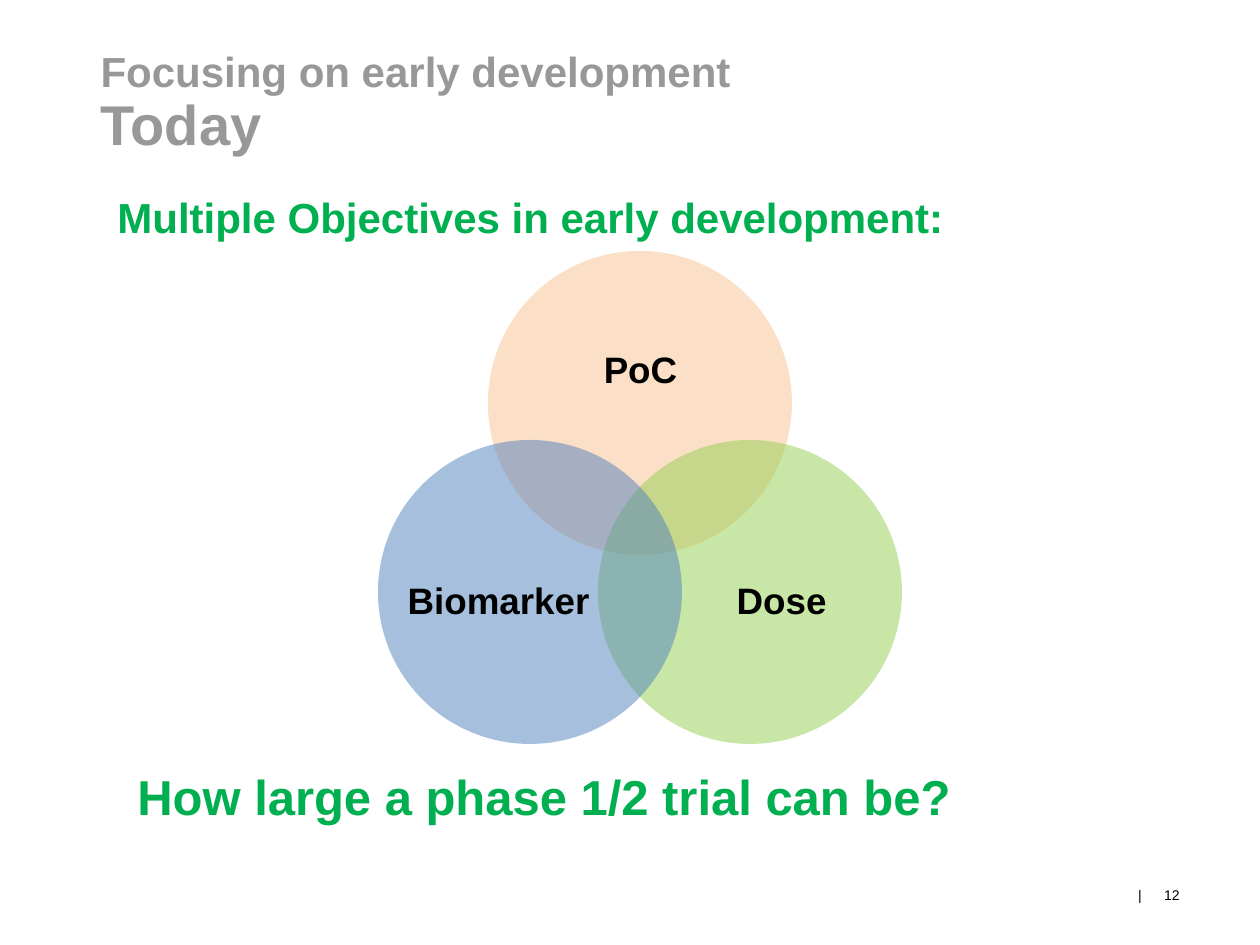
from dataclasses import dataclass

from lxml import etree
from pptx import Presentation, util as u
from pptx.dml.color import RGBColor
from pptx.enum import shapes, text
from pptx.oxml.ns import qn

EMU_PER_PX = 914400 / 126
FONT = "Arial"
BLACK, GREY, GREEN = "000000", "989898", "00B050"
Box = tuple[int, int, int, int]


@dataclass
class Circle:
    label: str
    fill: str
    center: tuple[int, int]
    label_box: Box


DIAMETER = 304
CENTER_X, TOP_Y, BOTTOM_Y, SPREAD = 640, 403, 592, 110
CIRCLES = [
    Circle("PoC", "FAC090", (CENTER_X, TOP_Y), (529, 304, 223, 136)),
    Circle("Dose", "92D050", (CENTER_X + SPREAD, BOTTOM_Y), (690, 519, 183, 168)),
    Circle("Biomarker", "4F81BD", (CENTER_X - SPREAD, BOTTOM_Y), (407, 519, 183, 168)),
]


def px(length: int) -> int:
    return round(length * EMU_PER_PX)


def color(value: str) -> RGBColor:
    return RGBColor.from_string(value)


def add_run(paragraph, words: str, size: int, fill: str, bold: bool) -> None:
    run = paragraph.add_run()
    run.text = words
    run.font.name = FONT
    run.font.size = u.Pt(size)
    run.font.bold = bold
    run.font.color.rgb = color(fill)


def add_text(slide, words: str, box: Box, *, size: int, fill: str = BLACK,
             bold: bool = True, centered: bool = False, inset: bool = True,
             tab: int | None = None) -> None:
    shape = slide.shapes.add_textbox(*map(px, box))
    frame = shape.text_frame
    frame.word_wrap = True
    if not inset:
        frame.margin_left = frame.margin_right = 0
        frame.margin_top = frame.margin_bottom = 0
    paragraph = frame.paragraphs[0]
    if centered:
        frame.vertical_anchor = text.MSO_ANCHOR.MIDDLE
        paragraph.alignment = text.PP_ALIGN.CENTER
        paragraph.line_spacing = 0.9
    if tab is not None:
        properties = paragraph._p.get_or_add_pPr()
        stops = etree.SubElement(properties, qn("a:tabLst"))
        etree.SubElement(stops, qn("a:tab"), pos=str(px(tab)), algn="l")
    add_run(paragraph, words, size, fill, bold)


def set_title(slide) -> None:
    title = slide.shapes.title
    title.left, title.top, title.width, title.height = map(px, (88, 45, 1157, 110))
    frame = title.text_frame
    frame.auto_size = text.MSO_AUTO_SIZE.NONE
    frame.vertical_anchor = text.MSO_ANCHOR.TOP
    paragraph = frame.paragraphs[0]
    paragraph.alignment = text.PP_ALIGN.LEFT
    paragraph.line_spacing = 0.9
    add_run(paragraph, "Focusing on early development", 24, GREY, True)
    paragraph.add_line_break()
    add_run(paragraph, "Today", 32, GREY, True)


def add_circle(slide, circle: Circle) -> None:
    left, top = (middle - DIAMETER // 2 for middle in circle.center)
    shape = slide.shapes.add_shape(
        shapes.MSO_SHAPE.OVAL, *map(px, (left, top, DIAMETER, DIAMETER)))
    shape.shadow.inherit = False
    shape.line.fill.background()
    shape.fill.solid()
    shape.fill.fore_color.rgb = color(circle.fill)
    # Half transparent, so the overlaps show
    fill_color = shape._element.spPr.find(qn("a:solidFill"))[0]
    etree.SubElement(fill_color, qn("a:alpha"), val="50000")
    add_text(slide, circle.label, circle.label_box, size=21, centered=True, inset=False)


def main() -> None:
    presentation = Presentation()
    presentation.slide_width, presentation.slide_height = px(1260), px(945)
    slide = presentation.slides.add_slide(presentation.slide_layouts[5])
    set_title(slide)

    # Venn diagram
    for circle in CIRCLES:
        add_circle(slide, circle)

    # Page number
    add_text(slide, "|\t12", (1138, 886, 43, 33), size=8, bold=False, inset=False, tab=26)

    # Statements above and below the diagram
    add_text(slide, "Multiple Objectives in early development:",
             (105, 185, 1062, 63), size=24, fill=GREEN)
    add_text(slide, "How large a phase 1/2 trial can be?",
             (125, 760, 873, 72), size=28, fill=GREEN)

    presentation.save("out.pptx")


if __name__ == "__main__":
    main()
